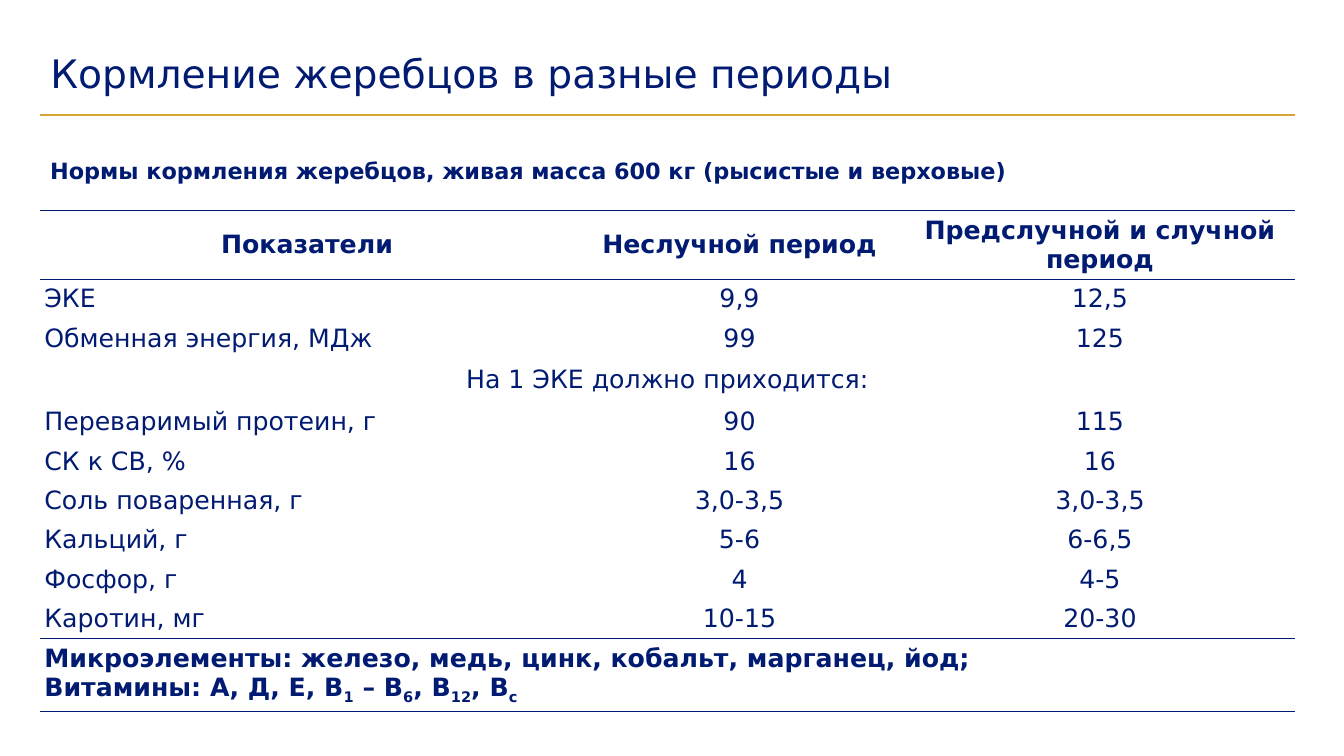
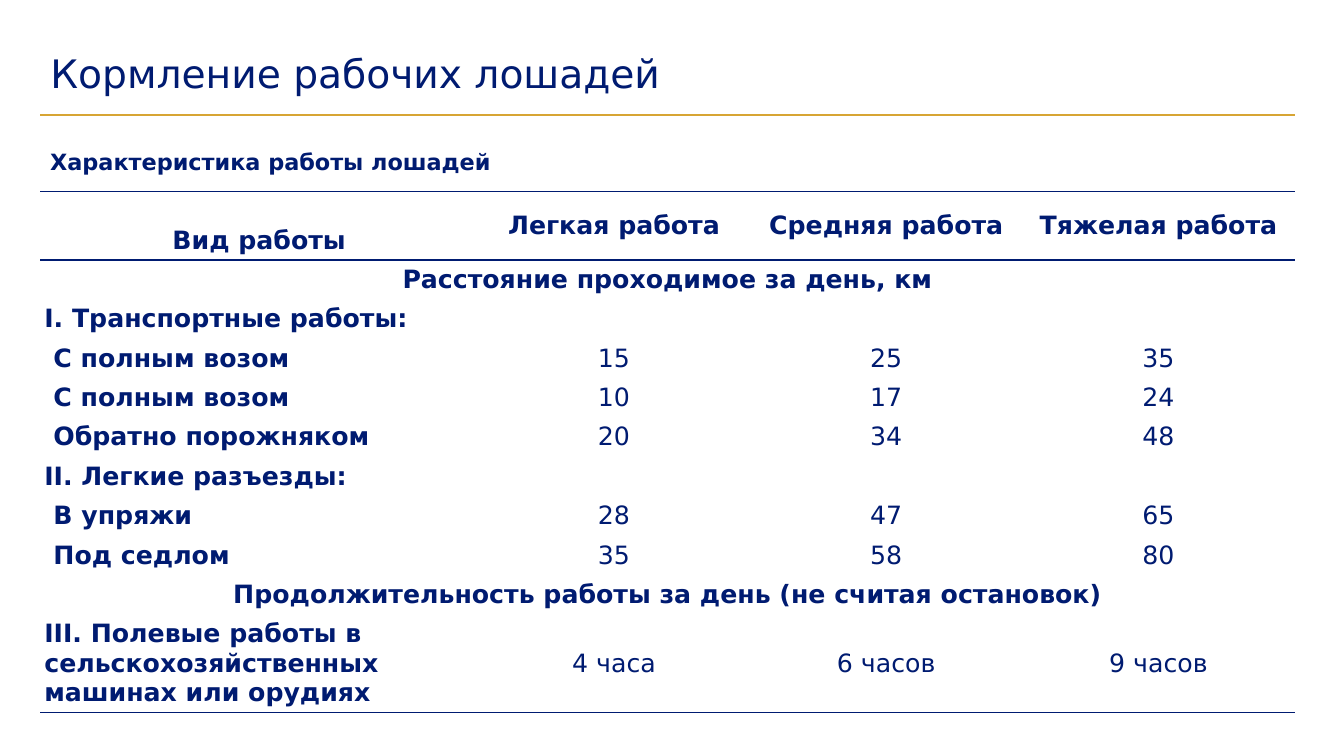
from dataclasses import dataclass

from lxml import etree
from pptx import Presentation
from pptx import util as u
from pptx.dml import color
from pptx.enum import shapes, text
from pptx.oxml import ns

SCALE = 9144
NAVY = "001B71"
GOLD = "D7A534"
FONT = "DejaVu Sans"
LEFT, WIDTH = 40, 1244
PLAIN_TABLE_STYLE = "{2D5ABB26-0587-4C30-8999-92F81FD0307C}"
CENTER, START = text.PP_ALIGN.CENTER, text.PP_ALIGN.LEFT
MIDDLE, BOTTOM = text.MSO_ANCHOR.MIDDLE, text.MSO_ANCHOR.BOTTOM


@dataclass
class Row:
    """One table row; a single text spans all columns."""
    texts: tuple
    height: int = 39
    bold: str = ""
    label_align: object = START
    label_anchor: object = MIDDLE
    indent: int = 0
    rules: str = ""


STALLION_ROWS = [
    Row(("Показатели", "Неслучной период", "Предслучной и случной период"),
        67, "all", CENTER, rules="TB"),
    Row(("ЭКЕ", "9,9", "12,5")),
    Row(("Обменная энергия, МДж", "99", "125")),
    Row(("На 1 ЭКЕ должно приходится:",), 44, label_align=CENTER),
    Row(("Переваримый протеин, г", "90", "115")),
    Row(("СК к СВ, %", "16", "16")),
    Row(("Соль поваренная, г", "3,0-3,5", "3,0-3,5")),
    Row(("Кальций, г", "5-6", "6-6,5")),
    Row(("Фосфор, г", "4", "4-5")),
    Row(("Каротин, мг", "10-15", "20-30")),
    Row(("Микроэлементы: железо, медь, цинк, кобальт, марганец, йод;\n"
         "Витамины: А, Д, Е, В|1| – В|6|, В|12|, В|с",), 72, "all", rules="TB"),
]

WORK_ROWS = [
    Row(("Вид работы", "Легкая работа", "Средняя работа", "Тяжелая работа"),
        68, "all", CENTER, BOTTOM, rules="TB"),
    Row(("Расстояние проходимое за день, км",), bold="all", label_align=CENTER),
    Row(("Ι. Транспортные работы:", "", "", ""), bold="label"),
    Row(("С полным возом", "15", "25", "35"), bold="label", indent=9),
    Row(("С полным возом", "10", "17", "24"), bold="label", indent=9),
    Row(("Обратно порожняком", "20", "34", "48"), bold="label", indent=9),
    Row(("ΙΙ. Легкие разъезды:", "", "", ""), bold="label"),
    Row(("В упряжи", "28", "47", "65"), bold="label", indent=9),
    Row(("Под седлом", "35", "58", "80"), bold="label", indent=9),
    Row(("Продолжительность работы за день (не считая остановок)",),
        bold="all", label_align=CENTER),
    Row(("ΙΙΙ. Полевые работы в сельскохозяйственных машинах или орудиях",
         "4 часа", "6 часов", "9 часов"), 97, "label", rules="B"),
]


def px(length):
    """Convert px to EMU."""
    return u.Emu(length * SCALE)


def rgb(value):
    """Turn a hex string into a colour."""
    return color.RGBColor.from_string(value)


def style_paragraph(paragraph, size, bold=False, align=START):
    """Apply the common font to a paragraph."""
    paragraph.alignment = align
    font = paragraph.font
    font.name, font.size, font.bold = FONT, u.Pt(size), bold
    font.color.rgb = rgb(NAVY)


def write_line(paragraph, line):
    """Add runs to a paragraph; every second part between bars is a subscript."""
    for index, part in enumerate(line.split("|")):
        run = paragraph.add_run()
        run.text = part
        if index % 2:
            run._r.get_or_add_rPr().set("baseline", "-25000")


def add_title(slide, title_text):
    """Place the slide title and the rule under it."""
    title = slide.shapes.title
    title.left, title.top, title.width, title.height = map(px, (LEFT, 45, WIDTH, 60))
    frame = title.text_frame
    frame.text = title_text
    frame.vertical_anchor = MIDDLE
    frame.auto_size = text.MSO_AUTO_SIZE.NONE
    style_paragraph(frame.paragraphs[0], 28)
    frame.paragraphs[0].line_spacing = 0.9

    rule = slide.shapes.add_connector(
        shapes.MSO_CONNECTOR.STRAIGHT, px(LEFT), px(114), px(LEFT + WIDTH), px(114))
    rule.line.color.rgb = rgb(GOLD)
    rule.line.width = u.Pt(1)
    etree.SubElement(rule._element.spPr, ns.qn("a:effectLst"))


def add_caption(slide, top, caption_text):
    """Add the bold caption above a table."""
    caption = slide.shapes.add_textbox(px(LEFT), px(top), px(WIDTH), px(37))
    frame = caption.text_frame
    frame.word_wrap = True
    frame.auto_size = text.MSO_AUTO_SIZE.SHAPE_TO_FIT_TEXT
    frame.text = caption_text
    style_paragraph(frame.paragraphs[0], 16, bold=True)


def rule_cell(cell, sides):
    """Draw the horizontal borders of a cell, T for top and B for bottom."""
    properties = cell._tc.get_or_add_tcPr()
    for index, side in enumerate(sides):
        border = etree.Element(ns.qn(f"a:ln{side}"), w=str(u.Pt(1)))
        fill = etree.SubElement(border, ns.qn("a:solidFill"))
        etree.SubElement(fill, ns.qn("a:srgbClr"), val=NAVY)
        properties.insert(index, border)


def fill_cell(cell, content, bold, align, anchor, indent):
    """Write the text of one table cell."""
    cell.margin_left, cell.margin_right = px(4 + indent), px(4)
    cell.margin_top = cell.margin_bottom = px(5)
    cell.vertical_anchor = anchor
    frame = cell.text_frame
    for index, line in enumerate(content.split("\n")):
        paragraph = frame.add_paragraph() if index else frame.paragraphs[0]
        style_paragraph(paragraph, 18, bold, align)
        if line:
            write_line(paragraph, line)


def add_norms_table(slide, top, widths, rows):
    """Add a table with open sides and horizontal rules."""
    height = sum(row.height for row in rows)
    frame = slide.shapes.add_table(
        len(rows), len(widths), px(LEFT), px(top), px(sum(widths)), px(height))
    table = frame.table
    table.first_row = table.horz_banding = False
    table._tbl.tblPr.find(ns.qn("a:tableStyleId")).text = PLAIN_TABLE_STYLE
    for column, width in zip(table.columns, widths):
        column.width = px(width)
    for row_index, row in enumerate(rows):
        table.rows[row_index].height = px(row.height)
        cells = [table.cell(row_index, i) for i in range(len(widths))]
        for cell in cells:
            cell.fill.background()
            rule_cell(cell, row.rules)
        if len(row.texts) == 1:
            cells[0].merge(cells[-1])
        label, *values = row.texts
        fill_cell(cells[0], label, bool(row.bold), row.label_align,
                  row.label_anchor, row.indent)
        for cell, value in zip(cells[1:], values):
            fill_cell(cell, value, row.bold == "all", CENTER, MIDDLE, 0)


def add_norms_slide(prs, title, caption, caption_top, table_top, widths, rows):
    """Build a slide with a title, a caption and a table."""
    slide = prs.slides.add_slide(prs.slide_layouts[5])
    add_title(slide, title)
    add_norms_table(slide, table_top, widths, rows)
    add_caption(slide, caption_top, caption)


def main():
    """Build and save the presentation."""
    prs = Presentation()
    prs.slide_width, prs.slide_height = px(1333), px(750)
    add_norms_slide(
        prs, "Кормление жеребцов в разные периоды",
        "Нормы кормления жеребцов, живая масса 600 кг (рысистые и верховые)",
        151, 209, (529, 329, 386), STALLION_ROWS)
    add_norms_slide(
        prs, "Кормление рабочих лошадей", "Характеристика работы лошадей",
        142, 190, (434, 270, 270, 270), WORK_ROWS)
    prs.save("out.pptx")


if __name__ == "__main__":
    main()
